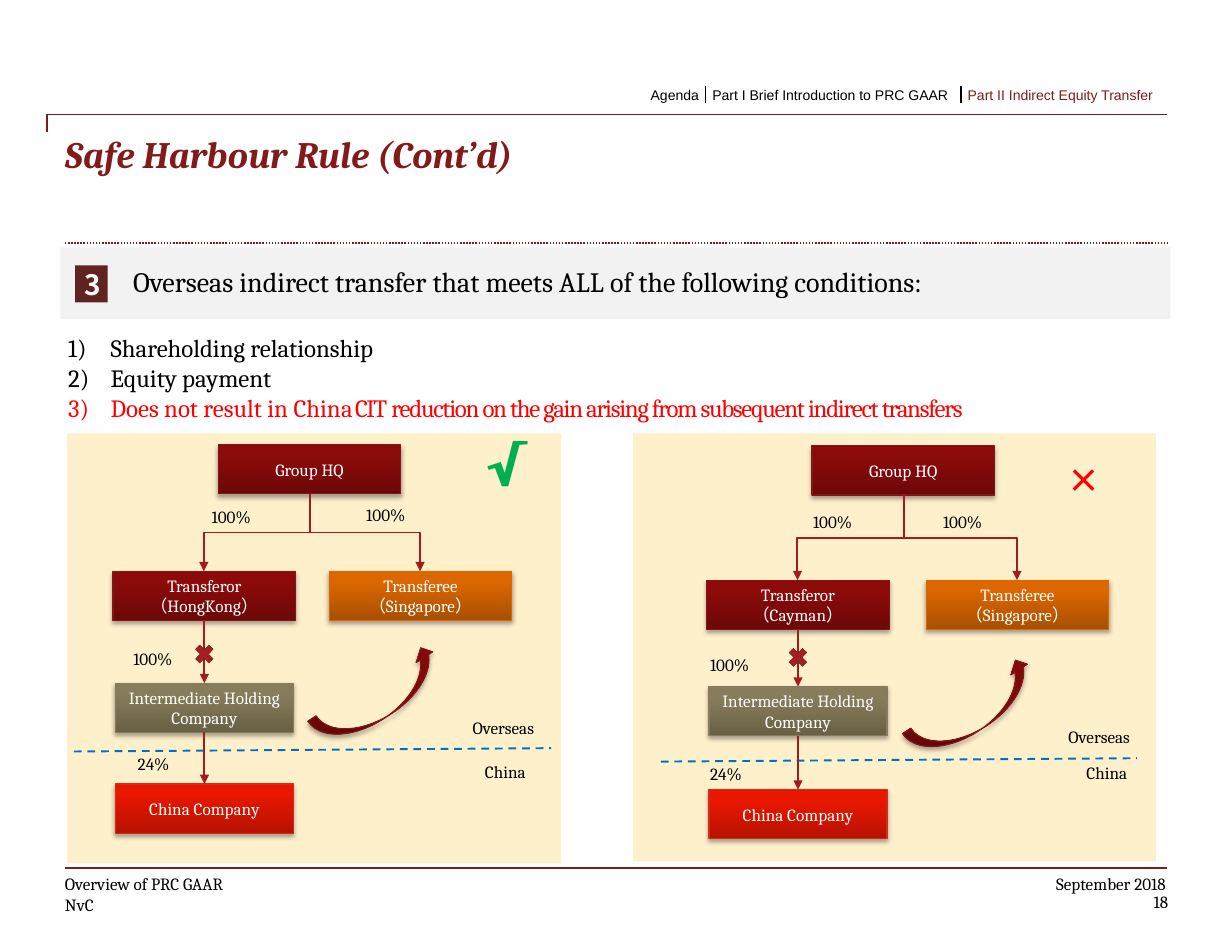
"""Build the safe harbour rule slide with its two group charts."""
from dataclasses import dataclass
from typing import Any

from lxml.etree import SubElement
from pptx import Presentation
from pptx.dml.color import RGBColor
from pptx.enum.dml import MSO_LINE
from pptx.enum.shapes import MSO_CONNECTOR, MSO_SHAPE
from pptx.enum.text import MSO_ANCHOR, PP_ALIGN
from pptx.oxml.ns import qn
from pptx.util import Inches, Pt

BLACK = RGBColor(0x00, 0x00, 0x00)
WHITE = RGBColor(0xFF, 0xFF, 0xFF)
MAROON = RGBColor(0x82, 0x1A, 0x1A)
BROWN = RGBColor(0x60, 0x23, 0x20)
CREAM = RGBColor(0xFF, 0xF0, 0xCC)
GREY = RGBColor(0xF2, 0xF2, 0xF2)
BLUE = RGBColor(0x00, 0x70, 0xC0)
GREEN = RGBColor(0x00, 0xB0, 0x50)
RED = RGBColor(0xFF, 0x00, 0x00)
ARROW = RGBColor(0xA3, 0x1C, 0x1C)
CROSS = RGBColor(0xA3, 0x20, 0x20)
EDGE = RGBColor(0x79, 0x18, 0x18)


@dataclass
class Tone:
    dark: RGBColor
    light: RGBColor
    edge: RGBColor


@dataclass
class Label:
    text: str
    x: float
    y: float
    wide: float = 0.6
    high: float = 0.26


@dataclass
class Panel:
    frame: tuple[float, float, float, float]
    shift: float
    rows: tuple[float, float, float, float]
    right: float
    place: str
    border: tuple[float, float, float, float]
    curve: tuple[float, float]
    cross: float
    labels: list[Label]
    sign: Label
    look: dict[str, Any]


WINE = Tone(RGBColor(0x6D, 0x08, 0x08), RGBColor(0x8D, 0x0A, 0x0A), RGBColor(0x82, 0x17, 0x17))
AMBER = Tone(RGBColor(0xA9, 0x4F, 0x00), RGBColor(0xDC, 0x67, 0x00), RGBColor(0xDE, 0x68, 0x00))
OLIVE = Tone(RGBColor(0x69, 0x60, 0x45), RGBColor(0x88, 0x7D, 0x5A), RGBColor(0x85, 0x7C, 0x5F))
FLAME = Tone(RGBColor(0xB5, 0x12, 0x00), RGBColor(0xEA, 0x17, 0x00), RGBColor(0xD6, 0x29, 0x17))
BODY = {"name": "Cambria", "size": Pt(11)}

PANELS = [
    Panel((0.6, 3.87, 4.41, 3.84), 0, (3.97, 5.1, 6.1, 7), 2.94, "HongKong",
          (0.66, 6.71, 4.92, 6.68), (2.74, 6.06), 5.72,
          [Label("100%", 1.89, 4.52), Label("100%", 3.27, 4.5), Label("100%", 1.19, 5.79),
           Label("24%", 1.23, 6.73), Label("Overseas", 4.22, 6.41, 1.05),
           Label("China", 4.33, 6.8, 1.05)],
          Label("√", 4.33, 3.83, 0.78, 0.65), {"color": GREEN, "bold": True}),
    Panel((5.65, 3.87, 4.67, 3.82), 5.3, (3.98, 5.18, 6.13, 7.05), 8.27, "Cayman",
          (5.9, 6.8, 10.15, 6.77), (8.05, 6.17), 5.75,
          [Label("100%", 7.26, 4.57), Label("100%", 8.42, 4.57), Label("100%", 6.34, 5.84),
           Label("24%", 6.34, 6.82), Label("Overseas", 9.54, 6.49, 1.05),
           Label("China", 9.7, 6.81, 1.05)],
          Label("×", 9.54, 3.93, 0.78, 0.65), {"color": RED}),
]


def style(font, look: dict[str, Any]) -> None:
    """Set font attributes from a dict."""
    for key, value in look.items():
        if key == "color":
            font.color.rgb = value
        else:
            setattr(font, key, value)


def write(frame, lines: list[str], look: dict[str, Any], align=PP_ALIGN.LEFT) -> None:
    """Fill a text frame with one paragraph a line."""
    for i, line in enumerate(lines):
        para = frame.paragraphs[0] if i == 0 else frame.add_paragraph()
        para.alignment = align
        run = para.add_run()
        run.text = line
        style(run.font, look)


def add_text(slide, label: Label, look: dict[str, Any], align=PP_ALIGN.LEFT,
             wrap: bool = True, pad: float = 0):
    """Add a text box without top or bottom margins."""
    box = slide.shapes.add_textbox(*map(Inches, (label.x, label.y, label.wide, label.high)))
    frame = box.text_frame
    form = {"word_wrap": wrap, "margin_left": Inches(pad), "margin_right": Inches(pad),
            "margin_top": 0, "margin_bottom": 0}
    for key, value in form.items():
        setattr(frame, key, value)
    if label.text:
        write(frame, [label.text], {**BODY, "color": BLACK, **look}, align)
    return frame


def add_block(slide, kind, area: tuple, fill: RGBColor, edge: RGBColor | None = None) -> None:
    """Add a flat shape."""
    shape = slide.shapes.add_shape(kind, *map(Inches, area))
    shape.shadow.inherit = False
    shape.fill.solid()
    shape.fill.fore_color.rgb = fill
    if edge is None:
        shape.line.fill.background()
    else:
        shape.line.color.rgb = edge
        shape.line.width = Pt(0.25)


def add_glow(slide, kind, area: tuple, tone: Tone, lines: list[str]):
    """Add a graded shape with a soft shadow and centred text."""
    shape = slide.shapes.add_shape(kind, *map(Inches, area))
    shape.fill.gradient()
    shape.fill.gradient_angle = 90
    for stop, color, spot in zip(shape.fill.gradient_stops, (tone.dark, tone.light), (0, 0.8)):
        stop.color.rgb = color
        stop.position = spot
    shape.line.color.rgb = tone.edge
    shape.line.width = Pt(0.75)
    shape.shadow.inherit = False
    effect = shape.element.spPr.find(qn("a:effectLst"))
    shade = SubElement(effect, qn("a:outerShdw"), blurRad=str(Pt(3.1)), dist=str(Pt(1.8)),
                       dir="5400000", rotWithShape="0")
    color = SubElement(shade, qn("a:srgbClr"), val="000000")
    SubElement(color, qn("a:alpha"), val="35000")
    shape.text_frame.vertical_anchor = MSO_ANCHOR.MIDDLE
    write(shape.text_frame, lines, {**BODY, "color": WHITE}, PP_ALIGN.CENTER)
    return shape


def add_line(slide, ends: tuple, color: RGBColor, width: float, dash=None,
             head: bool = False, kind=MSO_CONNECTOR.STRAIGHT):
    """Add a connector, with an arrowhead if asked."""
    line = slide.shapes.add_connector(kind, *map(Inches, ends))
    line.line.color.rgb = color
    line.line.width = Pt(width)
    if dash:
        line.line.dash_style = dash
    props = line.element.spPr
    if head:
        SubElement(props.find(qn("a:ln")), qn("a:tailEnd"), type="triangle")
    SubElement(props, qn("a:effectLst"))
    return line


def add_branch(slide, x: float, y: float, to_x: float, to_y: float) -> None:
    """Add an elbow arrow that runs down, across and down."""
    drop, span = to_y - y, abs(to_x - x)
    left, top = (x + to_x - drop) / 2, (y + to_y - span) / 2
    line = add_line(slide, (left, top, left + drop, top + span), ARROW, 1.25,
                    head=True, kind=MSO_CONNECTOR.ELBOW)
    frame = line.element.spPr.find(qn("a:xfrm"))
    if to_x < x:
        frame.set("rot", "5400000")
    else:
        frame.set("rot", "16200000")
        frame.set("flipH", "1")


def add_panel(slide, panel: Panel) -> None:
    """Draw one group chart."""
    add_block(slide, MSO_SHAPE.RECTANGLE, panel.frame, CREAM)
    add_line(slide, panel.border, BLUE, 1.25, MSO_LINE.DASH)
    top, pair, mid, low = panel.rows
    x = panel.shift
    boxes = [
        (x + 1.95, top, 1.63, WINE, ["Group HQ"]),
        (panel.right, pair, 1.63, AMBER, ["Transferee", "（Singapore）"]),
        (x + 1.01, pair, 1.63, WINE, ["Transferor", f"（{panel.place}）"]),
        (x + 1.03, mid, 1.59, OLIVE, ["Intermediate Holding Company"]),
        (x + 1.03, low, 1.59, FLAME, ["China Company"]),
    ]
    chain = [add_glow(slide, MSO_SHAPE.RECTANGLE, (left, y, wide, 0.44), tone, lines)
             for left, y, wide, tone, lines in boxes][2:]
    for upper, lower in zip(chain, chain[1:]):
        line = add_line(slide, (0, 0, 1, 1), ARROW, 1.25, head=True)
        line.begin_connect(upper, 2)
        line.end_connect(lower, 0)
    for goal in (x + 1.82, panel.right + 0.81):
        add_branch(slide, x + 2.77, top + 0.44, goal, pair)
    add_block(slide, MSO_SHAPE.MATH_MULTIPLY, (x + 1.71, panel.cross, 0.23, 0.24), CROSS, EDGE)
    curve = add_glow(slide, MSO_SHAPE.CURVED_UP_ARROW, (*panel.curve, 1.29, 0.35), WINE, [])
    curve.rotation = 327
    for label in panel.labels:
        add_text(slide, label, {})
    add_text(slide, panel.sign, {"size": Pt(36), **panel.look})


def add_frame(slide) -> None:
    """Draw the title, header and footer."""
    title = slide.shapes.title
    area = {"left": 0.58, "top": 1.17, "width": 9.84, "height": 0.92}
    for key, value in area.items():
        setattr(title, key, Inches(value))
    form = {"margin_left": 0, "margin_right": 0, "margin_top": 0, "margin_bottom": 0,
            "vertical_anchor": MSO_ANCHOR.TOP, "word_wrap": True}
    for key, value in form.items():
        setattr(title.text_frame, key, value)
    write(title.text_frame, ["Safe Harbour Rule (Cont’d)"],
          {"name": "Cambria", "size": Pt(24), "bold": True, "italic": True, "color": MAROON})
    path = slide.shapes.build_freeform(Inches(0.42), Inches(1.18))
    path.add_line_segments([(Inches(0.42), Inches(1.02)), (Inches(10.42), Inches(1.02))], False)
    rule = path.convert_to_shape()
    rule.shadow.inherit = False
    rule.fill.background()
    rule.line.color.rgb = MAROON
    rule.line.width = Pt(0.75)
    add_line(slide, (0.58, 2.17, 10.42, 2.17), MAROON, 1, MSO_LINE.ROUND_DOT)
    add_line(slide, (0.58, 7.75, 10.42, 7.75), MAROON, 0.75)
    for text, x, wide, color in [("Agenda", 5.78, 0.5, BLACK),
                                 ("Part I Brief Introduction to PRC GAAR", 6.33, 2.22, BLACK),
                                 ("Part II Indirect Equity Transfer", 8.61, 1.81, MAROON)]:
        add_text(slide, Label(text, x, 0.77, wide, 0.15),
                 {"name": "Arial", "size": Pt(9), "color": color}, wrap=False, pad=0.03)
    for x in (6.3, 8.58):
        add_line(slide, (x, 0.77, x, 0.92), BLACK, 1)
    add_text(slide, Label("Overview of PRC GAAR", 0.58, 7.8, 3.17, 0.19), {})
    add_text(slide, Label("September 2018", 9.3, 7.8, 1.11, 0.19), {}, PP_ALIGN.RIGHT)
    for label, align in [(Label("NvC", 0.58, 8.03, 0.3, 0.14), PP_ALIGN.LEFT),
                         (Label("18", 10.08, 8, 0.35, 0.17), PP_ALIGN.RIGHT)]:
        add_text(slide, label, {}, align).paragraphs[0].line_spacing = Pt(10)


def add_terms(slide) -> None:
    """Draw the banner and the numbered terms."""
    add_block(slide, MSO_SHAPE.RECTANGLE, (0.54, 2.21, 9.91, 0.64), GREY)
    add_text(slide, Label("Overseas indirect transfer that meets ALL of the following conditions:",
                          1.09, 2.36, 8.74, 0.3), {"size": Pt(18)}, pad=0.1)
    add_block(slide, MSO_SHAPE.RECTANGLE, (0.67, 2.37, 0.29, 0.33), BROWN)
    add_text(slide, Label("3", 0.75, 2.39, 0.41, 0.47),
             {"name": "Noto Sans CJK SC", "size": Pt(18), "bold": True, "color": WHITE})
    frame = add_text(slide, Label("", 0.51, 2.97, 10.49, 1.08), {}, pad=0.1)
    terms = [
        [("Shareholding relationship", BLACK, 0)],
        [("Equity payment", BLACK, 0)],
        [("Does not result in Chin", RED, 0), ("a CIT", RED, -100),
         (" reduction on the gain arising from subsequent indirect transfers", RED, -80)],
    ]
    for i, runs in enumerate(terms):
        para = frame.paragraphs[0] if i == 0 else frame.add_paragraph()
        props = para._p.get_or_add_pPr()
        props.set("marL", str(Inches(0.38)))
        props.set("indent", str(Inches(-0.38)))
        SubElement(props, qn("a:buFont"), typeface="+mj-lt")
        SubElement(props, qn("a:buAutoNum"), type="arabicParenR")
        for text, color, gap in runs:
            run = para.add_run()
            run.text = text
            style(run.font, {"name": "Cambria", "size": Pt(16), "color": color})
            run._r.get_or_add_rPr().set("spc", str(gap))


def main() -> None:
    """Build and save the deck."""
    deck = Presentation()
    deck.slide_width, deck.slide_height = Inches(11), Inches(8.5)
    slide = deck.slides.add_slide(deck.slide_layouts[5])
    add_frame(slide)
    for panel in PANELS:
        add_panel(slide, panel)
    add_terms(slide)
    deck.save("out.pptx")


if __name__ == "__main__":
    main()
